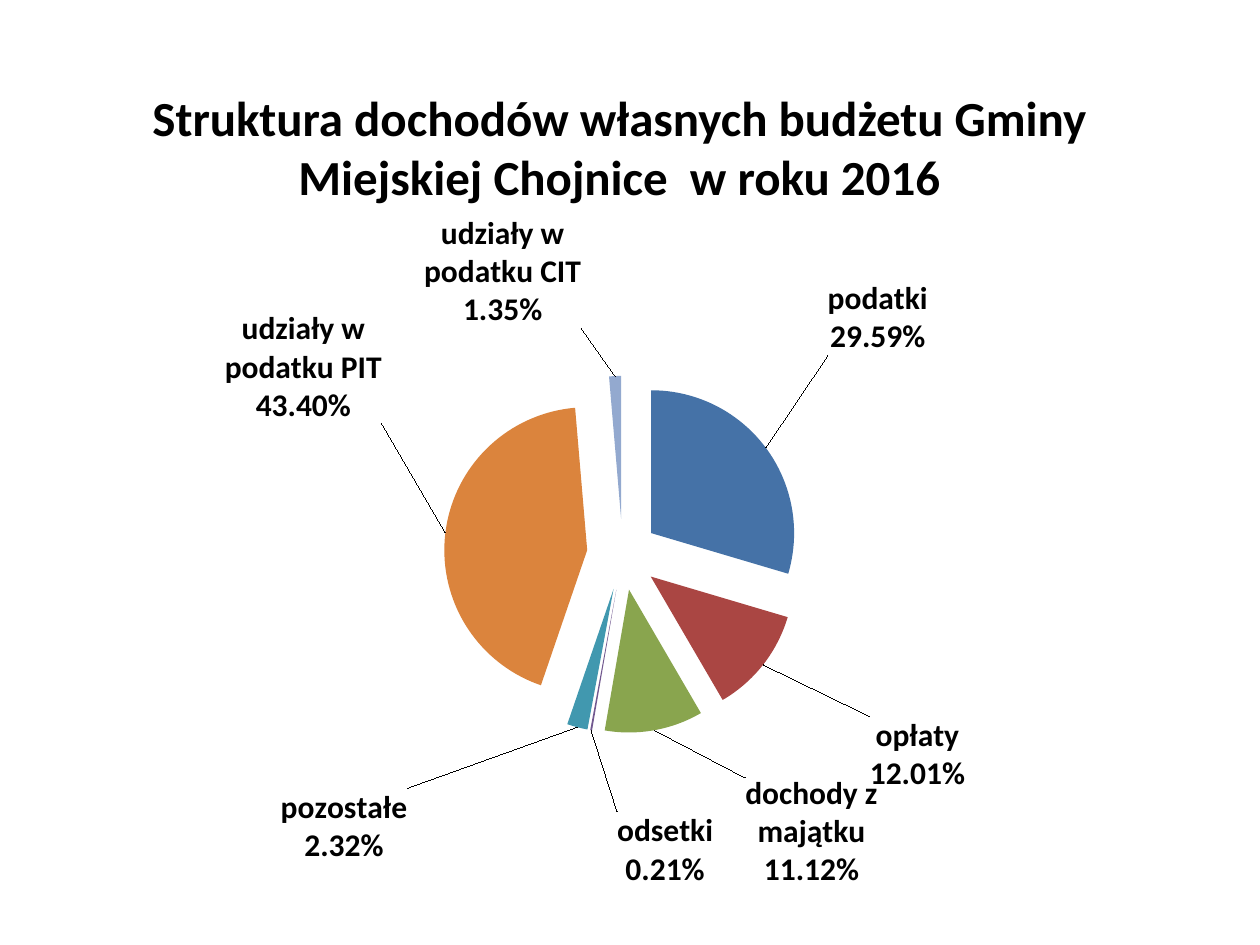
import copy

import lxml.etree
import pptx
import pptx.chart.data
import pptx.dml.color
import pptx.enum.chart
import pptx.enum.text
import pptx.oxml
import pptx.oxml.ns
import pptx.util

Inches = pptx.util.Inches
qn = pptx.oxml.ns.qn
CHART_NAMESPACE = 'xmlns:c="http://schemas.openxmlformats.org/drawingml/2006/chart"'

# category, share, slice colour, label shift as a fraction of the chart size
SLICES = [
    ("podatki", 29.59, "4572A7", (0.05, -0.13)),
    ("opłaty", 12.01, "AA4643", (0.09, 0.07)),
    ("dochody z majątku", 11.12, "89A54E", (0.08, 0.06)),
    ("odsetki", 0.21, "71588F", (0.11, 0.11)),
    ("pozostałe", 2.32, "4198AF", (-0.15, 0.08)),
    ("udziały w podatku PIT", 43.40, "DB843D", (-0.05, -0.16)),
    ("udziały w podatku CIT", 1.35, "93A9CF", (-0.10, -0.06)),
]


def color(value):
    return pptx.dml.color.RGBColor.from_string(value)


def set_font(font, size, bold):
    formats = {"name": "Calibri", "size": pptx.util.Pt(size), "bold": bold}
    for name, value in formats.items():
        setattr(font, name, value)
    font.color.rgb = color("000000")


def layout_element(**values):
    """Manual layout with the given entries, in schema order."""
    entries = "".join(f'<c:{name} val="{value}"/>' for name, value in values.items())
    return pptx.oxml.parse_xml(
        f"<c:layout {CHART_NAMESPACE}><c:manualLayout>{entries}</c:manualLayout></c:layout>"
    )


def add_title(slide, box, text):
    frame = slide.shapes.add_textbox(*box).text_frame
    frame.word_wrap = True
    frame.vertical_anchor = pptx.enum.text.MSO_ANCHOR.MIDDLE
    paragraph = frame.paragraphs[0]
    paragraph.text = text
    paragraph.alignment = pptx.enum.text.PP_ALIGN.CENTER
    set_font(paragraph.runs[0].font, 28, True)


def add_labels(series):
    """Category and percentage labels, each moved away from its slice."""
    labels = series.data_labels
    formats = {
        "number_format": "0.00%",
        "number_format_is_linked": False,
        "position": pptx.enum.chart.XL_LABEL_POSITION.OUTSIDE_END,
        "show_value": False,
        "show_category_name": True,
        "show_percentage": True,
    }
    for name, value in formats.items():
        setattr(labels, name, value)
    set_font(labels.font, 18, True)

    group = series._element.find(qn("c:dLbls"))
    leader_lines = group.find(qn("c:showLeaderLines"))
    if leader_lines is None:
        leader_lines = lxml.etree.SubElement(group, qn("c:showLeaderLines"))
    leader_lines.set("val", "1")

    # Each label repeats the group's settings and adds its own shift
    settings = [item for item in group if item is not leader_lines]
    for index, (_, _, _, (x, y)) in enumerate(SLICES):
        label = pptx.oxml.parse_xml(f'<c:dLbl {CHART_NAMESPACE}><c:idx val="{index}"/></c:dLbl>')
        label.append(layout_element(x=x, y=y))
        for item in settings:
            label.append(copy.deepcopy(item))
        lxml.etree.SubElement(label, qn("c:separator")).text = "\n"
        group.insert(index, label)


def add_pie(slide, box):
    data = pptx.chart.data.CategoryChartData()
    data.categories = [name for name, _, _, _ in SLICES]
    data.add_series("Series 1", [share for _, share, _, _ in SLICES])
    chart = slide.shapes.add_chart(pptx.enum.chart.XL_CHART_TYPE.PIE, *box, data).chart
    chart.has_title = False
    chart.has_legend = False
    set_font(chart.font, 10, False)

    plot = chart.plots[0]
    plot.vary_by_categories = True
    series = plot.series[0]
    for index, (_, _, fill_color, _) in enumerate(SLICES):
        fill = series.points[index].format.fill
        fill.solid()
        fill.fore_color.rgb = color(fill_color)
    add_labels(series)

    # Pull the slices apart
    explosion = pptx.oxml.parse_xml(f'<c:explosion {CHART_NAMESPACE} val="25"/>')
    series._element.find(qn("c:dPt")).addprevious(explosion)

    # Fix the place of the pie within the chart
    plot_area = chart._chartSpace.find(".//" + qn("c:plotArea"))
    old_layout = plot_area.find(qn("c:layout"))
    if old_layout is not None:
        plot_area.remove(old_layout)
    plot_area.insert(0, layout_element(
        layoutTarget="inner", xMode="edge", yMode="edge", x=0.22, y=0.24, w=0.52, h=0.53))


def main():
    presentation = pptx.Presentation()
    presentation.slide_width = Inches(10)
    presentation.slide_height = Inches(7.5)
    slide = presentation.slides.add_slide(presentation.slide_layouts[6])
    add_title(slide, (Inches(0.43), Inches(0.36), Inches(8.97), Inches(1.61)),
              "Struktura dochodów własnych budżetu Gminy Miejskiej Chojnice  w roku 2016")
    add_pie(slide, (Inches(0.67), Inches(1.7), Inches(8.9), Inches(5.35)))
    presentation.save("out.pptx")


if __name__ == "__main__":
    main()
